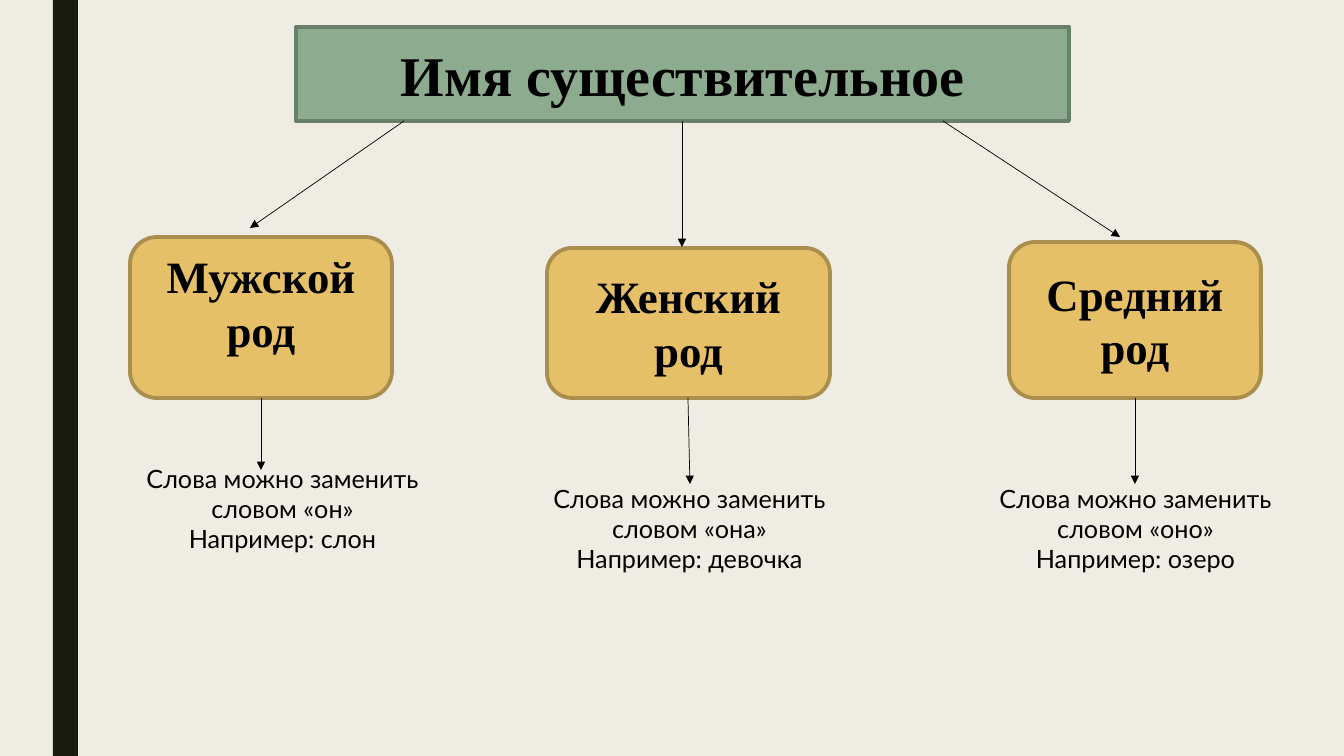
from dataclasses import dataclass

from lxml.etree import SubElement
from pptx import Presentation
from pptx.dml.color import RGBColor
from pptx.enum.shapes import MSO_CONNECTOR as Connector, MSO_SHAPE as Preset
from pptx.enum.text import MSO_ANCHOR as Anchor, PP_ALIGN as Align
from pptx.oxml.ns import qn
from pptx.util import Emu, Pt


@dataclass(frozen=True)
class Theme:
    background: str = "EFEDE3"
    stripe: str = "191B0E"
    title_fill: str = "8DAB8E"
    title_line: str = "687F69"
    gender_fill: str = "E6C069"
    gender_line: str = "AA8E4E"
    ink: str = "000000"
    heading_font: str = "Times New Roman"
    body_font: str = "Lato"
    title_size: int = 40
    gender_size: int = 32
    body_size: int = 18
    border: float = 2.75
    arrow: float = 0.5


theme = Theme()
PX = 914400 / 100.8


def write_text(shape, text, *, size, font, bold=False, anchor=Anchor.MIDDLE, bottom=5):
    """Put each line of text in its own centred paragraph; bottom is the lower inset in px."""
    frame = shape.text_frame
    frame.word_wrap = True
    frame.vertical_anchor = anchor
    frame.margin_bottom = Emu(round(bottom * PX))
    frame.text = text
    for paragraph in frame.paragraphs:
        paragraph.alignment = Align.CENTER
        paragraph.font.size = Pt(size)
        paragraph.font.name = font
        paragraph.font.bold = bold
        paragraph.font.color.rgb = RGBColor.from_string(theme.ink)


def add_box(preset, bounds, fill, line=None):
    shape = slide.shapes.add_shape(preset, *(Emu(round(value * PX)) for value in bounds))
    shape.shadow.inherit = False
    shape.fill.solid()
    shape.fill.fore_color.rgb = RGBColor.from_string(fill)
    if line:
        shape.line.color.rgb = RGBColor.from_string(line)
        shape.line.width = Pt(theme.border)
    else:
        shape.line.fill.background()
    return shape


presentation = Presentation()
presentation.slide_width = Emu(round(1344 * PX))
presentation.slide_height = Emu(round(756 * PX))
slide = presentation.slides.add_slide(presentation.slide_layouts[6])
slide.background.fill.solid()
slide.background.fill.fore_color.rgb = RGBColor.from_string(theme.background)

add_box(Preset.RECTANGLE, (53, 0, 25, 756), theme.stripe)
title = add_box(Preset.RECTANGLE, (296, 27, 773, 94), theme.title_fill, theme.title_line)
write_text(title, "Имя существительное", size=theme.title_size, font=theme.heading_font, bold=True)

# Name, box (left, top, width), lower inset, rule, rule box (left, top, width)
GENDER_BOTTOM = 398
genders = [
    ("Мужской род", (130, 237, 262), 35,
     "Слова можно заменить словом «он»\nНапример: слон", (99, 458, 367)),
    ("Женский род", (547, 248, 283), 5,
     "Слова можно заменить словом «она»\nНапример: девочка", (521, 478, 337)),
    ("Средний род", (1009, 242, 252), 5,
     "Слова можно заменить словом «оно»\nНапример: озеро", (950, 478, 371)),
]
for name, (left, top, width), inset, rule, (rule_left, rule_top, rule_width) in genders:
    gender = add_box(Preset.ROUNDED_RECTANGLE, (left, top, width, GENDER_BOTTOM - top),
                     theme.gender_fill, theme.gender_line)
    write_text(gender, name, size=theme.gender_size, font=theme.heading_font, bold=True, bottom=inset)
    bounds = (rule_left, rule_top, rule_width, 102)
    rule_box = slide.shapes.add_textbox(*(Emu(round(value * PX)) for value in bounds))
    write_text(rule_box, rule, size=theme.body_size, font=theme.body_font, anchor=Anchor.TOP)

# Start and end points: title to genders, then genders to rules
arrows = [
    (404, 121, 250, 228),
    (682, 121, 682, 247),
    (943, 121, 1120, 237),
    (261, GENDER_BOTTOM, 261, 470),
    (688, GENDER_BOTTOM, 690, 484),
    (1135, GENDER_BOTTOM, 1135, 484),
]
for points in arrows:
    arrow = slide.shapes.add_connector(
        Connector.STRAIGHT, *(Emu(round(value * PX)) for value in points))
    arrow.line.color.rgb = RGBColor.from_string(theme.ink)
    arrow.line.width = Pt(theme.arrow)
    SubElement(arrow.line._get_or_add_ln(), qn("a:tailEnd"), type="triangle")
    SubElement(arrow._element.spPr, qn("a:effectLst"))

presentation.save("out.pptx")
